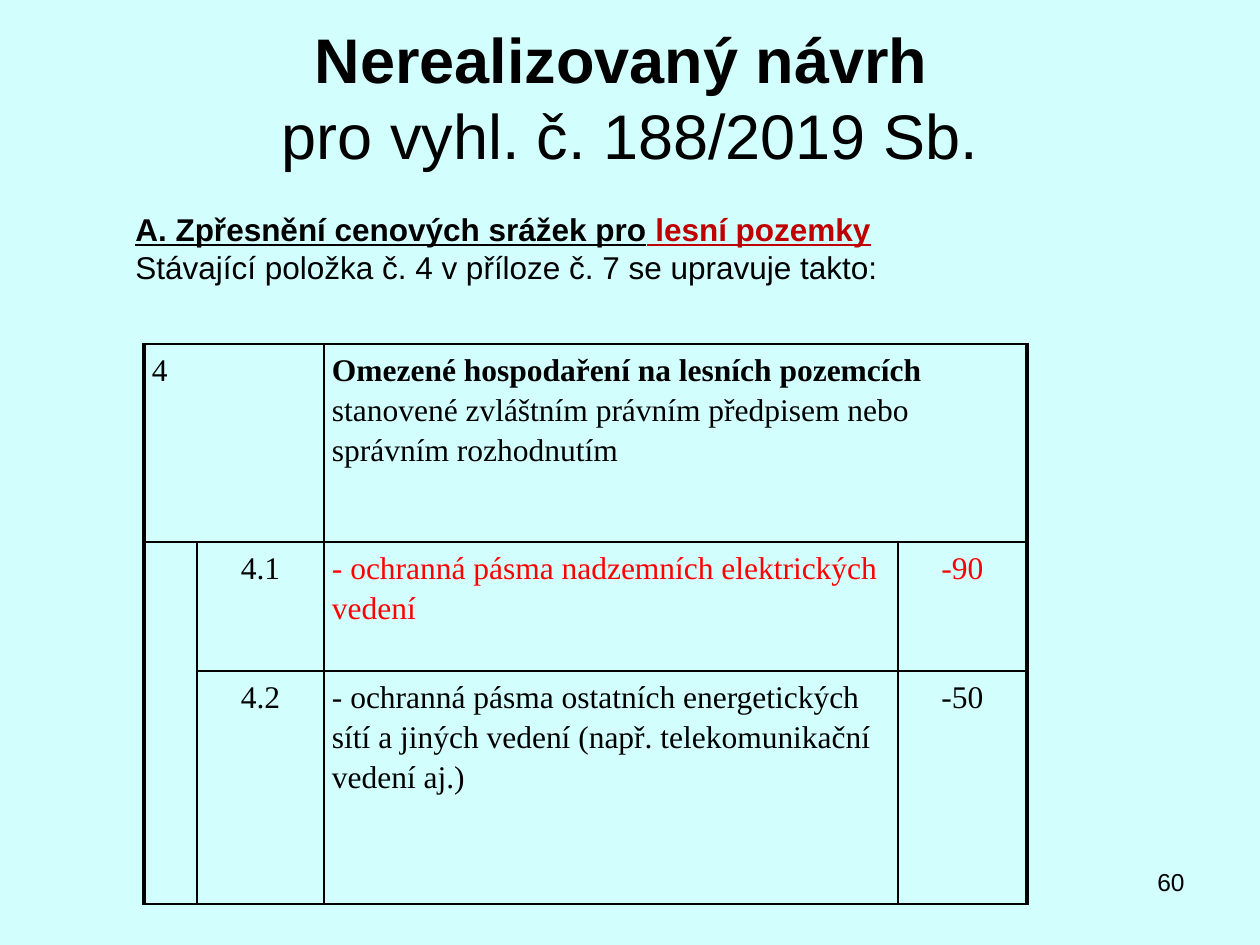
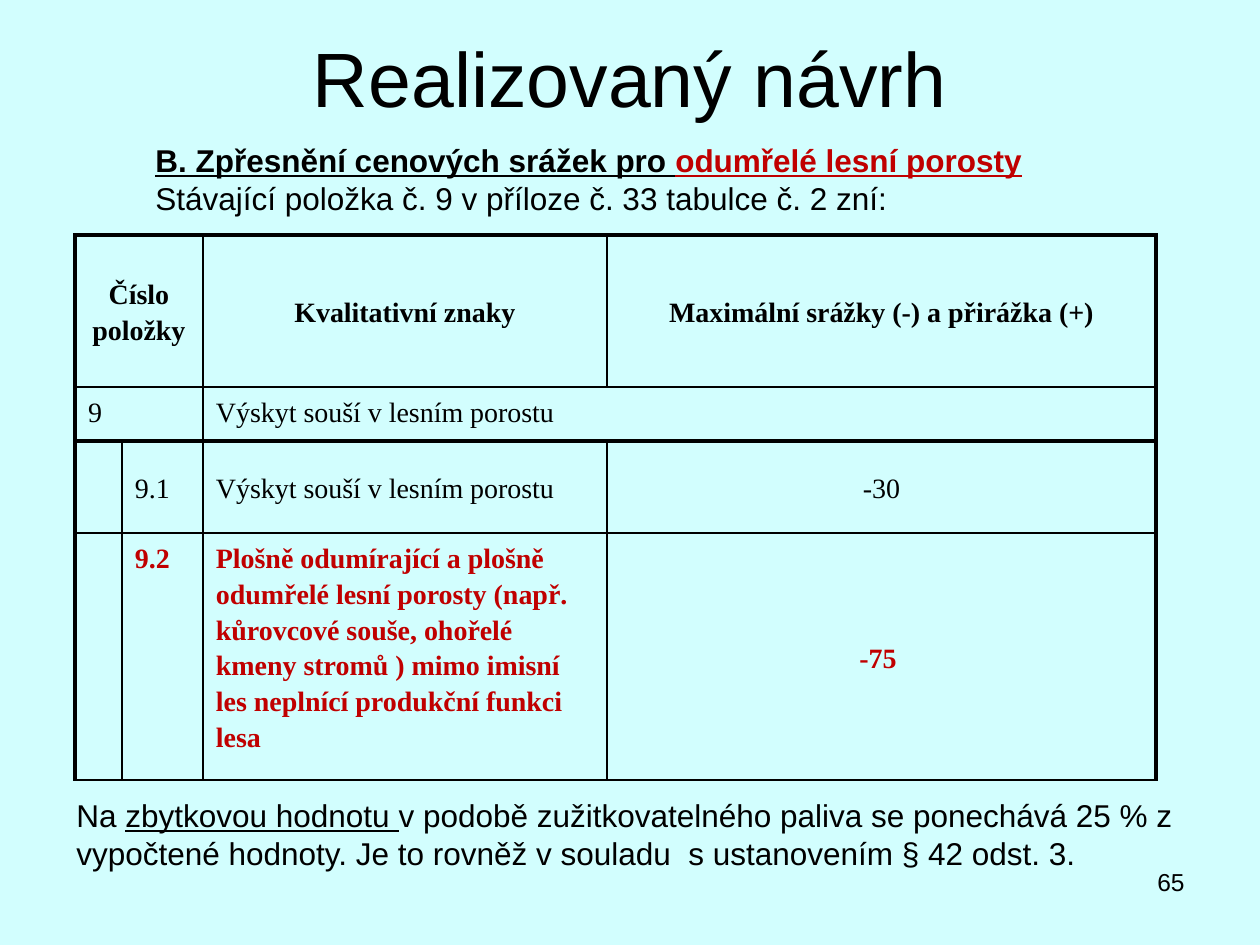
"""Build two slides on proposed price deductions for forest land and dead stands."""
import collections

import lxml.etree
import pptx
import pptx.dml.color
import pptx.enum.text
import pptx.oxml.ns
import pptx.util

BACKGROUND = pptx.dml.color.RGBColor(0xD2, 0xFE, 0xFE)
BLACK = pptx.dml.color.RGBColor(0, 0, 0)
RED = pptx.dml.color.RGBColor(0xFF, 0, 0)
DARK_RED = pptx.dml.color.RGBColor(0xC0, 0, 0)
SANS = "Arial"
SERIF = "Times New Roman"
PX_PER_INCH = 126
THIN, THICK = 1, 2.25
LEFT = pptx.enum.text.PP_ALIGN.LEFT
CENTER = pptx.enum.text.PP_ALIGN.CENTER
RIGHT = pptx.enum.text.PP_ALIGN.RIGHT
TOP = pptx.enum.text.MSO_ANCHOR.TOP
MIDDLE = pptx.enum.text.MSO_ANCHOR.MIDDLE
FIT = pptx.enum.text.MSO_AUTO_SIZE

Run = collections.namedtuple("Run", "text color bold underline", defaults=(BLACK, False, False))
Entry = collections.namedtuple("Entry", "runs align anchor", defaults=(LEFT, TOP))


def px(length):
    return pptx.util.Emu(round(length * 914400 / PX_PER_INCH))


class Deck:
    def __init__(self):
        self.presentation = pptx.Presentation()
        self.presentation.slide_width = px(1260)
        self.presentation.slide_height = px(945)
        backdrop = self.presentation.slide_master.background.fill
        backdrop.solid()
        backdrop.fore_color.rgb = BACKGROUND
        self.slide = None

    def start(self, runs, size, height, number):
        self.slide = self.presentation.slides.add_slide(self.presentation.slide_layouts[5])
        title = self.slide.shapes.title
        title.left, title.top, title.width, title.height = map(px, (63, 38, 1134, height))
        title.text_frame.auto_size = FIT.NONE
        title.text_frame.vertical_anchor = MIDDLE
        self.typeset(title.text_frame.paragraphs[0], runs, size, SANS, CENTER)
        self.text((903, 861, 294, 66), [[Run(number)]], 14, RIGHT, FIT.NONE)

    def typeset(self, paragraph, runs, size, face, align, spacing=None):
        paragraph.alignment = align
        paragraph.line_spacing = spacing
        paragraph.font.name = face
        paragraph.font.size = pptx.util.Pt(size)
        uniform = len({run[1:] for run in runs}) == 1
        for run in runs:
            piece = paragraph.add_run()
            piece.text = run.text.rstrip("\n")
            font = paragraph.font if uniform else piece.font
            font.color.rgb = run.color
            font.bold = run.bold
            font.underline = run.underline
            if run.text.endswith("\n"):
                paragraph.add_line_break()

    def text(self, box, paragraphs, size=18, align=LEFT, fit=FIT.SHAPE_TO_FIT_TEXT):
        frame = self.slide.shapes.add_textbox(*map(px, box)).text_frame
        frame.word_wrap = True
        frame.auto_size = fit
        for index, runs in enumerate(paragraphs):
            paragraph = frame.add_paragraph() if index else frame.paragraphs[0]
            self.typeset(paragraph, runs, size, SANS, align)

    def table(self, corner, columns, rows, entries, merges, thick_rows, size, inset):
        table = self.slide.shapes.add_table(
            len(rows), len(columns), *map(px, (*corner, sum(columns), sum(rows)))).table
        table.first_row = table.horz_banding = False
        for column, width in zip(table.columns, columns):
            column.width = px(width)
        for row, height in zip(table.rows, rows):
            row.height = px(height)
        for first, last in merges:
            table.cell(*first).merge(table.cell(*last))
        for r in range(len(rows)):
            for c in range(len(columns)):
                cell = table.cell(r, c)
                if not cell.is_spanned:
                    self.borders(cell, r, c, len(columns), thick_rows)
                cell.fill.background()
                cell.margin_left = cell.margin_right = px(inset[0])
                cell.margin_top = cell.margin_bottom = px(inset[1])
                if (r, c) in entries:
                    entry = entries[r, c]
                    cell.vertical_anchor = entry.anchor
                    self.typeset(cell.text_frame.paragraphs[0], entry.runs, size, SERIF,
                                 entry.align, 1.15)

    def borders(self, cell, r, c, column_count, thick_rows):
        bottom = r + (cell.span_height if cell.is_merge_origin else 1)
        right = c + (cell.span_width if cell.is_merge_origin else 1)
        outer = (0, column_count)
        sides = {"lnL": c in outer, "lnR": right in outer,
                 "lnT": r in thick_rows, "lnB": bottom in thick_rows}
        qn = pptx.oxml.ns.qn
        properties = cell._tc.get_or_add_tcPr()
        for side, thick in sides.items():
            line = lxml.etree.SubElement(properties, qn(f"a:{side}"))
            line.set("w", str(int(pptx.util.Pt(THICK if thick else THIN))))
            fill = lxml.etree.SubElement(line, qn("a:solidFill"))
            lxml.etree.SubElement(fill, qn("a:srgbClr")).set("val", str(BLACK))

    def heading(self, box, lead, topic, explanation):
        self.text(box, [[Run(lead, BLACK, True, True), Run(topic, DARK_RED, True, True)],
                        [Run(explanation)]])


def forest_land(deck):
    deck.start([Run("Nerealizovaný návrh \n", bold=True), Run("pro vyhl. č. 188/2019 Sb.")],
               36, 117, "60")
    entries = {
        (0, 0): Entry([Run("4")]),
        (0, 2): Entry([
            Run("Omezené hospodaření na lesních pozemcích ", bold=True),
            Run("stanovené zvláštním právním předpisem nebo správním rozhodnutím")]),
        (1, 1): Entry([Run("4.1")], CENTER),
        (1, 2): Entry([Run("- ochranná pásma nadzemních elektrických vedení", RED)]),
        (1, 3): Entry([Run("-90", RED)], CENTER),
        (2, 1): Entry([Run("4.2")], CENTER),
        (2, 2): Entry([Run("- ochranná pásma ostatních energetických sítí a jiných vedení "
                           "(např. telekomunikační vedení aj.)")]),
        (2, 3): Entry([Run("-50")], CENTER),
    }
    merges = [((0, 0), (0, 1)), ((0, 2), (0, 3)), ((1, 0), (2, 0))]
    deck.table((144, 344), (53, 127, 574, 129), (198, 129, 233), entries, merges, (), 18, (8, 4))
    deck.heading((123, 204, 1032, 127), "A. Zpřesnění cenových srážek pro", " lesní pozemky",
                 "Stávající položka č. 4 v příloze č. 7 se upravuje takto:")


def dead_stands(deck):
    deck.start([Run("Realizovaný návrh")], 44, 77, "65")
    dry_trees = [Run("Výskyt souší v lesním porostu")]
    entries = {
        (0, 0): Entry([Run("Číslo položky", bold=True)], CENTER, MIDDLE),
        (0, 2): Entry([Run("Kvalitativní znaky", bold=True)], CENTER, MIDDLE),
        (0, 3): Entry([Run("Maximální srážky (-) a přirážka (+)", bold=True)], CENTER, MIDDLE),
        (1, 0): Entry([Run("9")]),
        (1, 2): Entry(dry_trees),
        (2, 1): Entry([Run("9.1")], LEFT, MIDDLE),
        (2, 2): Entry(dry_trees, LEFT, MIDDLE),
        (2, 3): Entry([Run("-30")], CENTER, MIDDLE),
        (3, 1): Entry([Run("9.2", DARK_RED, True)]),
        (3, 2): Entry([Run("Plošně odumírající a plošně odumřelé lesní porosty (např. kůrovcové "
                           "souše, ohořelé kmeny stromů ) mimo imisní les neplnící produkční "
                           "funkci lesa", DARK_RED, True)]),
        (3, 3): Entry([Run("-75 ", DARK_RED, True)], CENTER, MIDDLE),
    }
    merges = [((0, 0), (0, 1)), ((1, 0), (1, 1)), ((1, 2), (1, 3))]
    deck.table((75, 235), (47, 81, 404, 549), (152, 54, 92, 247), entries, merges, (0, 2),
               16, (13, 6))
    deck.text((64, 790, 1142, 136), [[
        Run("Na "), Run("zbytkovou hodnotu ", underline=True),
        Run("v podobě zužitkovatelného paliva se ponechává 25 % z vypočtené hodnoty. "
            "Je to rovněž v souladu  s ustanovením § 42 odst. 3.")]])
    deck.heading((143, 135, 963, 127), "B. Zpřesnění cenových srážek pro ",
                 "odumřelé lesní porosty",
                 "Stávající položka č. 9 v příloze č. 33 tabulce č. 2 zní:")


def main():
    deck = Deck()
    forest_land(deck)
    dead_stands(deck)
    deck.presentation.save("out.pptx")


if __name__ == "__main__":
    main()
